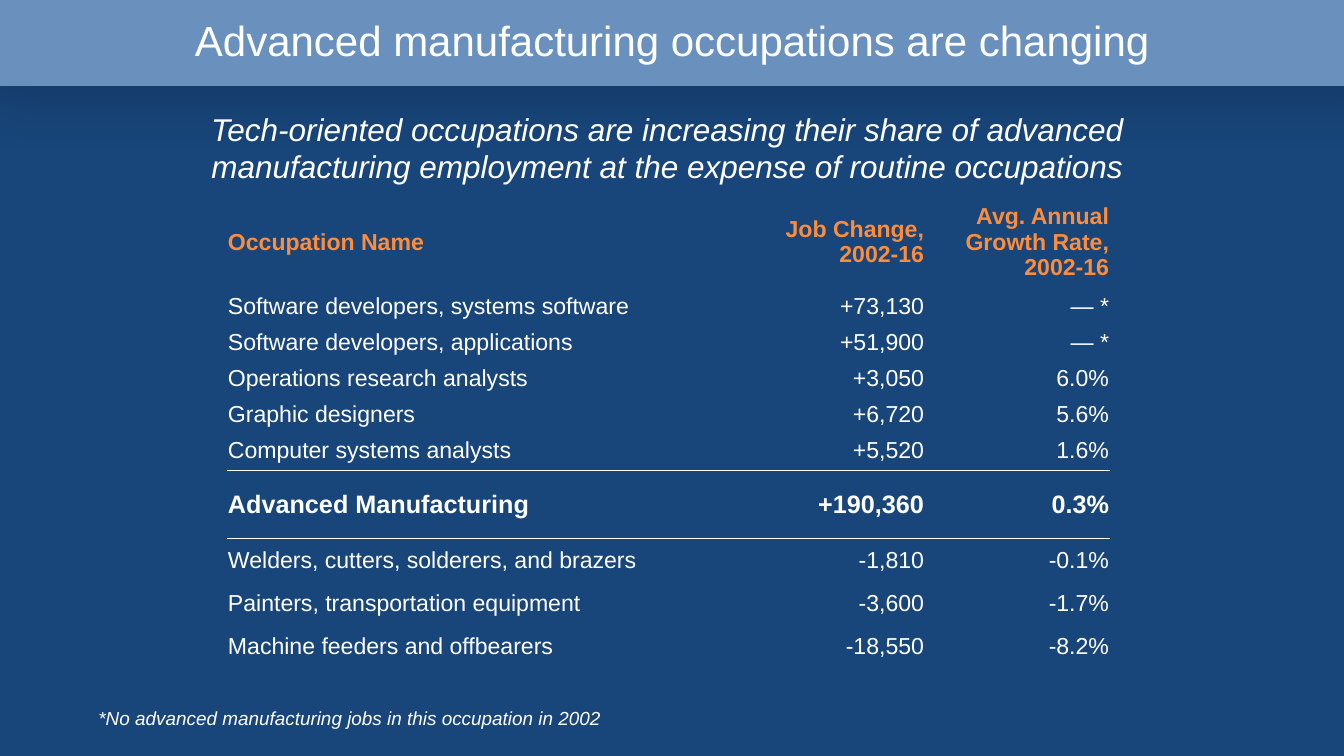
import pptx
import pptx.util
import pptx.dml.color
import pptx.enum.shapes
import pptx.enum.text
import pptx.oxml
import pptx.oxml.ns
from dataclasses import dataclass

EMU_PER_PX = 914400 / 75.6
ALIGN = pptx.enum.text.PP_ALIGN
ANCHOR = pptx.enum.text.MSO_ANCHOR
NO_STYLE = "{2D5ABB26-0587-4C30-8999-92F81FD0307C}"


@dataclass(frozen=True)
class Theme:
    font: str = "Arial"
    background: str = "18457A"
    band: str = "6A91BE"
    text: str = "FFFFFF"
    header: str = "FD8D3B"
    title_size: int = 40
    subtitle_size: int = 30
    total_size: int = 24
    body_size: int = 22
    note_size: int = 18


THEME = Theme()

HEADER = ("Occupation Name", "Job Change, 2002-16", "Avg. Annual Growth Rate, 2002-16")
GROWING = [
    ("Software developers, systems software", "+73,130", "— *"),
    ("Software developers, applications", "+51,900", "— *"),
    ("Operations research analysts", "+3,050", "6.0%"),
    ("Graphic designers", "+6,720", "5.6%"),
    ("Computer systems analysts", "+5,520", "1.6%"),
]
TOTAL = ("Advanced Manufacturing", "+190,360", "0.3%")
SHRINKING = [
    ("Welders, cutters, solderers, and brazers", "-1,810", "-0.1%"),
    ("Painters, transportation equipment", "-3,600", "-1.7%"),
    ("Machine feeders and offbearers", "-18,550", "-8.2%"),
]
BLANK = ("", "", "")


def px(n):
    return pptx.util.Emu(round(n * EMU_PER_PX))


def rgb(color):
    return pptx.dml.color.RGBColor.from_string(color)


def xml(tag, attrs, inner):
    return pptx.oxml.parse_xml(
        f"<a:{tag} {pptx.oxml.ns.nsdecls('a')} {attrs}>{inner}</a:{tag}>")


def write(tf, text, size, color=THEME.text, align=ALIGN.LEFT, bold=False, italic=False):
    tf.text = text
    p = tf.paragraphs[0]
    p.alignment = align
    for r in p.runs:
        r.font.name = THEME.font
        r.font.size = pptx.util.Pt(size)
        r.font.color.rgb = rgb(color)
        r.font.bold = bold
        r.font.italic = italic


def add_band(s):
    band = s.shapes.add_shape(pptx.enum.shapes.MSO_SHAPE.RECTANGLE,
                              px(-16), px(-8), px(1408), px(94))
    band.fill.solid()
    band.fill.fore_color.rgb = rgb(THEME.band)
    band.line.fill.background()
    band.shadow.inherit = False
    effects = band._element.spPr.find(pptx.oxml.ns.qn("a:effectLst"))
    effects.append(xml(
        "outerShdw", 'blurRad="660400" dist="186690" dir="5400000" rotWithShape="0"',
        '<a:srgbClr val="000000"><a:alpha val="14000"/></a:srgbClr>'))


def place_title(s, text):
    title = s.shapes.title
    title.left, title.top, title.width, title.height = px(0), px(11), px(1344), px(57)
    tf = title.text_frame
    tf.margin_left = tf.margin_top = tf.margin_right = tf.margin_bottom = px(3)
    tf.vertical_anchor = ANCHOR.MIDDLE
    write(tf, text, THEME.title_size, align=ALIGN.CENTER)
    # Bring the title in front of the band.
    s.shapes._spTree.append(title._element)


def add_text(s, box, text, size, align=ALIGN.LEFT):
    tf = s.shapes.add_textbox(*map(px, box)).text_frame
    tf.word_wrap = True
    write(tf, text, size, align=align, italic=True)


def add_table(s, top, columns, heights, rows, size, margins, bold=False):
    """Add an unstyled table; margins are the top and bottom cell margins in px."""
    shape = s.shapes.add_table(len(rows), len(columns), px(227), px(top),
                               px(sum(columns)), px(sum(heights)))
    table = shape.table
    table.first_row = table.horz_banding = False
    table._tbl.tblPr.find(pptx.oxml.ns.qn("a:tableStyleId")).text = NO_STYLE
    for column, width in zip(table.columns, columns):
        column.width = px(width)
    for row, height, values in zip(table.rows, heights, rows):
        row.height = px(height)
        for i, (cell, value) in enumerate(zip(row.cells, values)):
            cell.margin_left = cell.margin_right = px(1)
            cell.margin_top, cell.margin_bottom = map(px, margins)
            cell.vertical_anchor = ANCHOR.BOTTOM
            cell.fill.background()
            write(cell.text_frame, value, size, bold=bold,
                  align=ALIGN.RIGHT if i else ALIGN.LEFT)
    return table


def style_header(row):
    for cell in row.cells:
        cell.vertical_anchor = ANCHOR.MIDDLE
        for r in cell.text_frame.paragraphs[0].runs:
            r.font.bold = True
            r.font.color.rgb = rgb(THEME.header)


def rule_row(row, tag):
    """Draw a thin line on one edge of a row: lnT above, lnB below."""
    for cell in row.cells:
        cell._tc.get_or_add_tcPr().insert(0, xml(
            tag, 'w="12700"',
            f'<a:solidFill><a:srgbClr val="{THEME.text}"/></a:solidFill>'))


def main():
    prs = pptx.Presentation()
    prs.slide_width, prs.slide_height = px(1344), px(756)
    s = prs.slides.add_slide(prs.slide_layouts[5])
    s.background.fill.solid()
    s.background.fill.fore_color.rgb = rgb(THEME.background)

    add_band(s)
    add_text(s, (163, 106, 1009, 84),
             "Tech-oriented occupations are increasing their share of advanced "
             "manufacturing employment at the expense of routine occupations",
             THEME.subtitle_size, ALIGN.CENTER)
    place_title(s, "Advanced manufacturing occupations are changing")

    growing = add_table(s, 200, (549, 149, 185), [91] + [36] * len(GROWING),
                        [HEADER] + GROWING, THEME.body_size, (1, 8))
    style_header(growing.rows[0])
    rule_row(growing.rows[len(GROWING)], "lnB")

    columns = (507, 191, 185)
    shrinking = add_table(s, 538, columns, [43] * len(SHRINKING),
                          SHRINKING, THEME.body_size, (8, 8))
    rule_row(shrinking.rows[0], "lnT")
    add_table(s, 462, columns, (27, 30, 26), (BLANK, TOTAL, BLANK),
              THEME.total_size, (1, 0), bold=True)

    add_text(s, (91, 703, 1019, 30),
             "*No advanced manufacturing jobs in this occupation in 2002", THEME.note_size)
    prs.save("out.pptx")


if __name__ == "__main__":
    main()
